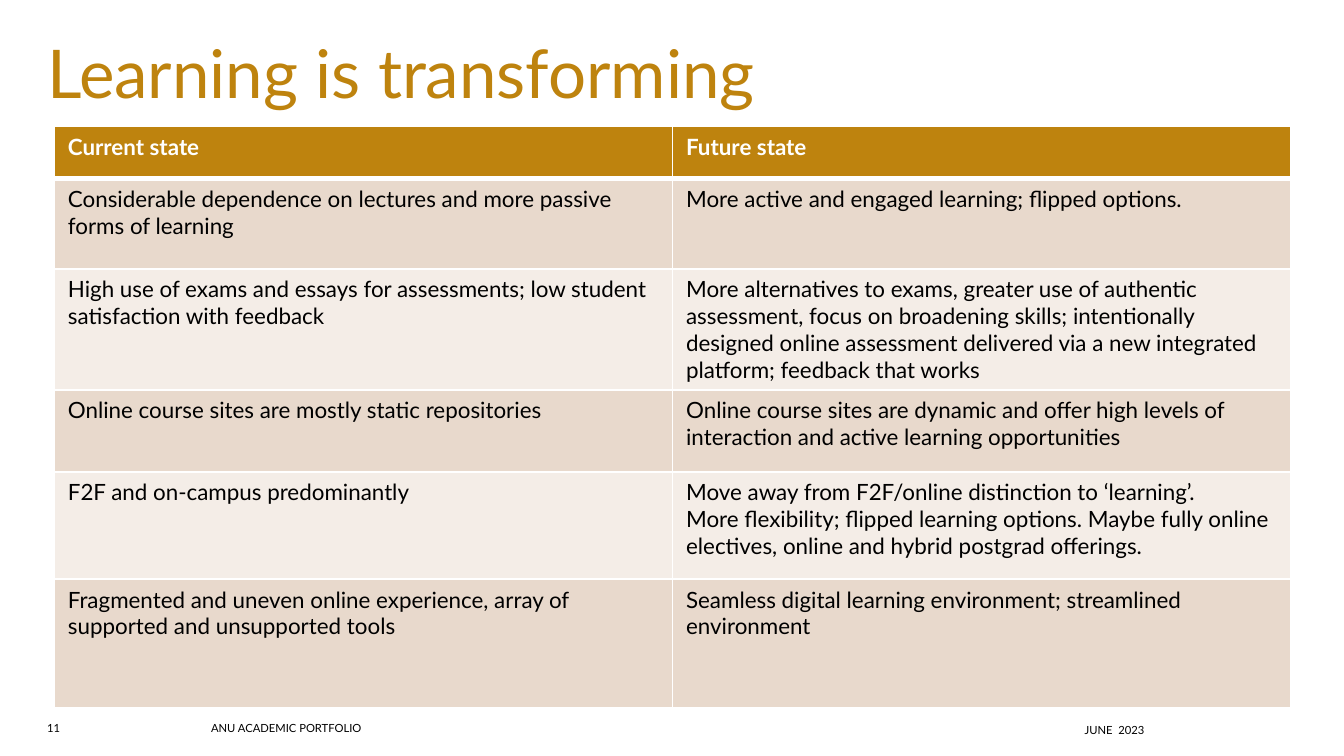
from lxml import etree
from pptx import Presentation
from pptx.dml.color import RGBColor
from pptx.enum.text import MSO_ANCHOR
from pptx.oxml.ns import qn
from pptx.util import Inches, Pt

TOP, MIDDLE = MSO_ANCHOR.TOP, MSO_ANCHOR.MIDDLE
FONT = "Lato"
GOLD, BLACK, WHITE = "BE830E", "000000", "FFFFFF"
BANDS = ("E8D9CC", "F4EDE7")
WIDTH = 10
HEIGHT = WIDTH * 9 / 16
UNIT = WIDTH / 100  # grid step in inches: 100 columns across the slide

STATES = [
    ("Current state", "Future state"),
    ("Considerable dependence on lectures and more passive forms of learning",
     "More active and engaged learning; flipped options."),
    ("High use of exams and essays for assessments; low student satisfaction "
     "with feedback",
     "More alternatives to exams, greater use of authentic assessment, focus on "
     "broadening skills; intentionally designed online assessment delivered via "
     "a new integrated platform; feedback that works"),
    ("Online course sites are mostly static repositories",
     "Online course sites are dynamic and offer high levels of interaction and "
     "active learning opportunities"),
    ("F2F and on-campus predominantly",
     "Move away from F2F/online distinction to ‘learning’.\n"
     "More flexibility; flipped learning options. Maybe fully online electives, "
     "online and hybrid postgrad offerings."),
    ("Fragmented and uneven online experience, array of supported and "
     "unsupported tools",
     "Seamless digital learning environment; streamlined environment"),
]
ROW_HEIGHTS = (3.9, 6.7, 7.8, 6.1, 8, 9.6)


def color(value):
    return RGBColor.from_string(value)


def grid(*steps):
    return [Inches(step * UNIT) for step in steps]


def write(tf, text, size=12, fill=BLACK, bold=False, spacing=None, after=None):
    """Fill a text frame, one paragraph for each line of text."""
    for i, line in enumerate(text.split("\n")):
        p = tf.add_paragraph() if i else tf.paragraphs[0]
        p.line_spacing = spacing
        p.space_after = after
        r = p.add_run()
        r.text = line
        r.font.name, r.font.size, r.font.bold = FONT, Pt(size), bold
        r.font.color.rgb = color(fill)


def border(cell, side, width):
    tag = cell._tc.get_or_add_tcPr()
    ln = etree.SubElement(tag, qn(f"a:ln{side}"), w=str(Pt(width)))
    fill = etree.SubElement(ln, qn("a:solidFill"))
    etree.SubElement(fill, qn("a:srgbClr"), val=WHITE)


class Deck:
    """Holds the style and the current slide."""

    def __init__(self):
        self.prs = Presentation()
        self.prs.slide_width, self.prs.slide_height = Inches(WIDTH), Inches(HEIGHT)
        self.s = self.prs.slides.add_slide(self.prs.slide_layouts[6])

    def text(self, box, text, anchor=TOP, **style):
        tf = self.s.shapes.add_textbox(*grid(*box)).text_frame
        tf.word_wrap = True
        tf.vertical_anchor = anchor
        tf.margin_left = tf.margin_top = tf.margin_right = tf.margin_bottom = 0
        write(tf, text, **style)

    def table(self, box, rows, heights):
        table = self.s.shapes.add_table(len(rows), len(rows[0]), *grid(*box)).table
        for row, height in zip(table.rows, grid(*heights)):
            row.height = height
        for i, texts in enumerate(rows):
            header = i == 0
            for cell, text in zip(table.rows[i].cells, texts):
                # A thick rule parts the header from the first row
                for side in "LRTB":
                    thick = (i, side) in ((0, "B"), (1, "T"))
                    border(cell, side, 3 if thick else 1)
                cell.fill.solid()
                cell.fill.fore_color.rgb = color(GOLD if header else BANDS[(i - 1) % 2])
                write(cell.text_frame, text, fill=WHITE if header else BLACK, bold=header)


def main():
    deck = Deck()

    # Comparison table
    deck.table((4.05, 9.4, 92, 43.2), STATES, ROW_HEIGHTS)

    # Footer
    for left, width, text, anchor in (
        (15.7, 59.1, "ANU ACADEMIC PORTFOLIO", TOP),
        (3.5, 3.9, "11", TOP),
        (80.7, 7.9, "JUNE  2023", MIDDLE),
    ):
        deck.text((left, 53.7, width, 1.2), text, anchor, size=6)

    # Title
    deck.text((3.5, 3.5, 92.5, 16.5), "Learning is transforming",
              size=36, fill=GOLD, spacing=0.8, after=Pt(6))

    deck.prs.save("out.pptx")


if __name__ == "__main__":
    main()
